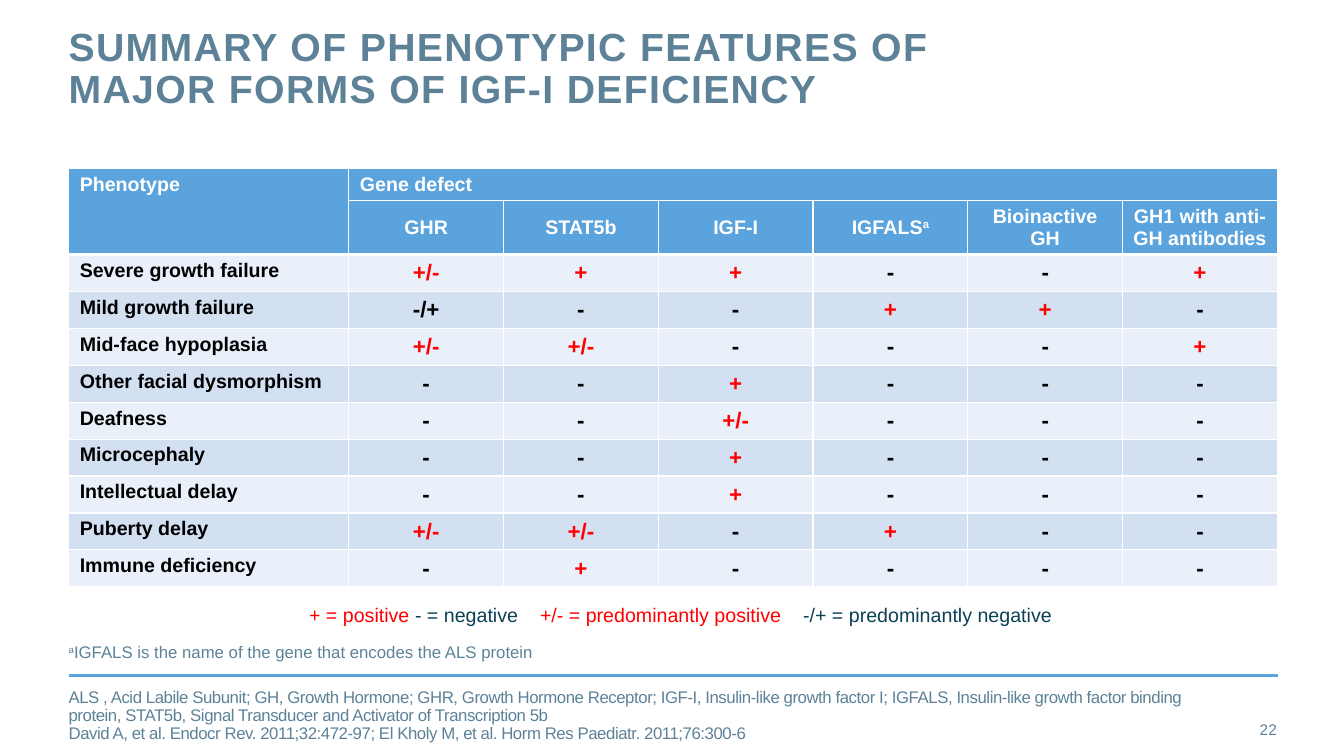
import pptx
import pptx.util
import pptx.dml.color
import pptx.enum.text
import pptx.enum.shapes
import pptx.oxml
from pptx.oxml.ns import nsdecls, qn
from lxml import etree

Cm, Pt = pptx.util.Cm, pptx.util.Pt
ALIGN = pptx.enum.text.PP_ALIGN
ANCHOR = pptx.enum.text.MSO_ANCHOR

SLATE, BLUE, RED, NAVY = "5D8298", "5BA3DD", "FF0000", "0B4055"
WHITE, BLACK = "FFFFFF", "000000"
BANDS = ["EAF0F9", "D2E0F2"]

TITLE = "SUMMARY OF PHENOTYPIC FEATURES OF MAJOR FORMS OF IGF-I DEFICIENCY"
GENES = ["GHR", "STAT5b", "IGF-I", "IGFALS", "Bioinactive GH",
         "GH1 with anti-GH antibodies"]
TRAITS = [
    ("Severe growth failure", "+/- + + - - +"),
    ("Mild growth failure", "-/+ - - + + -"),
    ("Mid-face hypoplasia", "+/- +/- - - - +"),
    ("Other facial dysmorphism", "- - + - - -"),
    ("Deafness", "- - +/- - - -"),
    ("Microcephaly", "- - + - - -"),
    ("Intellectual delay", "- - + - - -"),
    ("Puberty delay", "+/- +/- - + - -"),
    ("Immune deficiency", "- + - - - -"),
]
LEGEND = [("+ = positive", RED), ("\t- = negative", NAVY),
          ("\t+/- = predominantly positive", RED),
          ("\t-/+ = predominantly negative", NAVY)]
STOPS = [2.67, 5.82, 12.45]
NOTE = "IGFALS is the name of the gene that encodes the ALS protein"
SOURCES = [
    "ALS , Acid Labile Subunit; GH, Growth Hormone; GHR, Growth Hormone "
    "Receptor; IGF-I, Insulin-like growth factor I; IGFALS, Insulin-like "
    "growth factor binding protein, STAT5b, Signal Transducer and Activator "
    "of Transcription 5b",
    "David A, et al. Endocr Rev. 2011;32:472-97; El Kholy M, et al. "
    "Horm Res Paediatr. 2011;76:300-6",
]

LEFT = 1.73
FIRST, GENE = 7.06, 3.9
HEADS, ROW = [0.8, 1.36], 0.93


def tint(code):
    return pptx.dml.color.RGBColor.from_string(code)


def write(para, text, size, color, bold=False, **extra):
    """Add a run; extra holds raw run attributes such as spc or baseline."""
    run = para.add_run()
    run.text = text
    style = {"name": "Arial", "size": Pt(size), "bold": bold}
    for key, value in style.items():
        setattr(run.font, key, value)
    run.font.color.rgb = tint(color)
    for key, value in extra.items():
        run._r.get_or_add_rPr().set(key, str(value))


def frame(shape, anchor=ANCHOR.TOP, inset=(0, 0, 0, 0)):
    """Set wrap, anchor and insets (left, top, right, bottom)."""
    text = shape.text_frame
    text.word_wrap = True
    text.auto_size = pptx.enum.text.MSO_AUTO_SIZE.NONE
    text.vertical_anchor = anchor
    for side, gap in zip(("left", "top", "right", "bottom"), inset):
        setattr(text, "margin_" + side, Cm(gap))
    return text


def box(slide, x, y, w, h, **style):
    return frame(slide.shapes.add_textbox(Cm(x), Cm(y), Cm(w), Cm(h)), **style)


def edge(cell, top, bottom):
    """Draw white borders, one point wide at left and right."""
    props = cell._tc.get_or_add_tcPr()
    sides = [("L", 1), ("R", 1), ("T", top), ("B", bottom)]
    for spot, (side, width) in enumerate(sides):
        props.insert(spot, pptx.oxml.parse_xml(
            f'<a:ln{side} {nsdecls("a")} w="{Pt(width)}"><a:solidFill>'
            f'<a:srgbClr val="{WHITE}"/></a:solidFill></a:ln{side}>'))


def fill_cell(cell, text, size, color, center):
    para = cell.text_frame.paragraphs[0]
    if center:
        para.alignment = ALIGN.CENTER
        cell.vertical_anchor = ANCHOR.MIDDLE
    write(para, text, size, color, True)
    return para


def add_grid(slide):
    rows, cols = len(HEADS) + len(TRAITS), 1 + len(GENES)
    tall = HEADS + [ROW] * len(TRAITS)
    wide = [FIRST] + [GENE] * len(GENES)
    grid = slide.shapes.add_table(rows, cols, Cm(LEFT), Cm(4.24),
                                  Cm(sum(wide)), Cm(sum(tall))).table
    for row, size in zip(grid.rows, tall):
        row.height = Cm(size)
    for col, size in zip(grid.columns, wide):
        col.width = Cm(size)
    for r in range(rows):
        for c in range(cols):
            cell = grid.cell(r, c)
            cell.fill.solid()
            cell.fill.fore_color.rgb = tint(BLUE if r < 2 else BANDS[r % 2])
            tight = r == 1 and c == cols - 1
            cell.margin_left = cell.margin_right = Cm(0.1 if tight else 0.28)
            edge(cell, 3 if r == 2 else 1,
                 3 if r == 1 or (r, c) == (0, 0) else 1)
    grid.cell(0, 0).merge(grid.cell(1, 0))
    grid.cell(0, 1).merge(grid.cell(0, cols - 1))
    fill_cell(grid.cell(0, 0), "Phenotype", 14, WHITE, False)
    fill_cell(grid.cell(0, 1), "Gene defect", 14, WHITE, False)
    for c, gene in enumerate(GENES, 1):
        para = fill_cell(grid.cell(1, c), gene, 14, WHITE, True)
        if gene == "IGFALS":
            write(para, "a", 14, WHITE, True, baseline=30000)
    for r, (trait, marks) in enumerate(TRAITS, 2):
        fill_cell(grid.cell(r, 0), trait, 14, BLACK, False)
        for c, mark in enumerate(marks.split(), 1):
            color = RED if mark[0] == "+" else BLACK
            fill_cell(grid.cell(r, c), mark, 16, color, True)


def main():
    deck = pptx.Presentation()
    deck.slide_width, deck.slide_height = Cm(33.87), Cm(19.05)
    slide = deck.slides.add_slide(deck.slide_layouts[5])

    title = slide.shapes.title
    place = {"left": LEFT, "top": 0.69, "width": 24.28, "height": 2.24}
    for key, value in place.items():
        setattr(title, key, Cm(value))
    para = frame(title).paragraphs[0]
    para.alignment = ALIGN.LEFT
    para.line_spacing = Pt(30)
    write(para, TITLE, 28, SLATE, True, spc=100)

    rule = slide.shapes.add_connector(
        pptx.enum.shapes.MSO_CONNECTOR.STRAIGHT,
        Cm(LEFT), Cm(17.02), Cm(32.21), Cm(17.02))
    rule.line.color.rgb = tint(BLUE)
    rule.line.width = Pt(2)
    etree.SubElement(rule._element.spPr, qn("a:effectLst"))

    add_grid(slide)

    para = box(slide, 7.54, 15.06, 19.41, 0.86,
               inset=(0.25, 0.13, 0.25, 0.13)).paragraphs[0]
    tabs = etree.SubElement(para._p.get_or_add_pPr(), qn("a:tabLst"))
    for stop in STOPS:
        etree.SubElement(tabs, qn("a:tab"), pos=str(Cm(stop)), algn="l")
    for text, color in LEGEND:
        write(para, text, 14, color)

    para = box(slide, LEFT, 16.05, 13.44, 0.76,
               inset=(0, 0.13, 0.25, 0.13)).paragraphs[0]
    write(para, "a", 12, SLATE, baseline=30000)
    write(para, NOTE, 12, SLATE)

    foot = box(slide, LEFT, 17.53, 28.27, 1.02, anchor=ANCHOR.MIDDLE)
    for i, text in enumerate(SOURCES):
        para = foot.add_paragraph() if i else foot.paragraphs[0]
        para.line_spacing = 0.9
        write(para, text, 12, SLATE, spc=-30)

    para = box(slide, 30, 17.86, 2.18, 1.02,
               anchor=ANCHOR.MIDDLE).paragraphs[0]
    para.alignment = ALIGN.RIGHT
    write(para, "22", 11, SLATE)

    deck.save("out.pptx")


if __name__ == "__main__":
    main()
